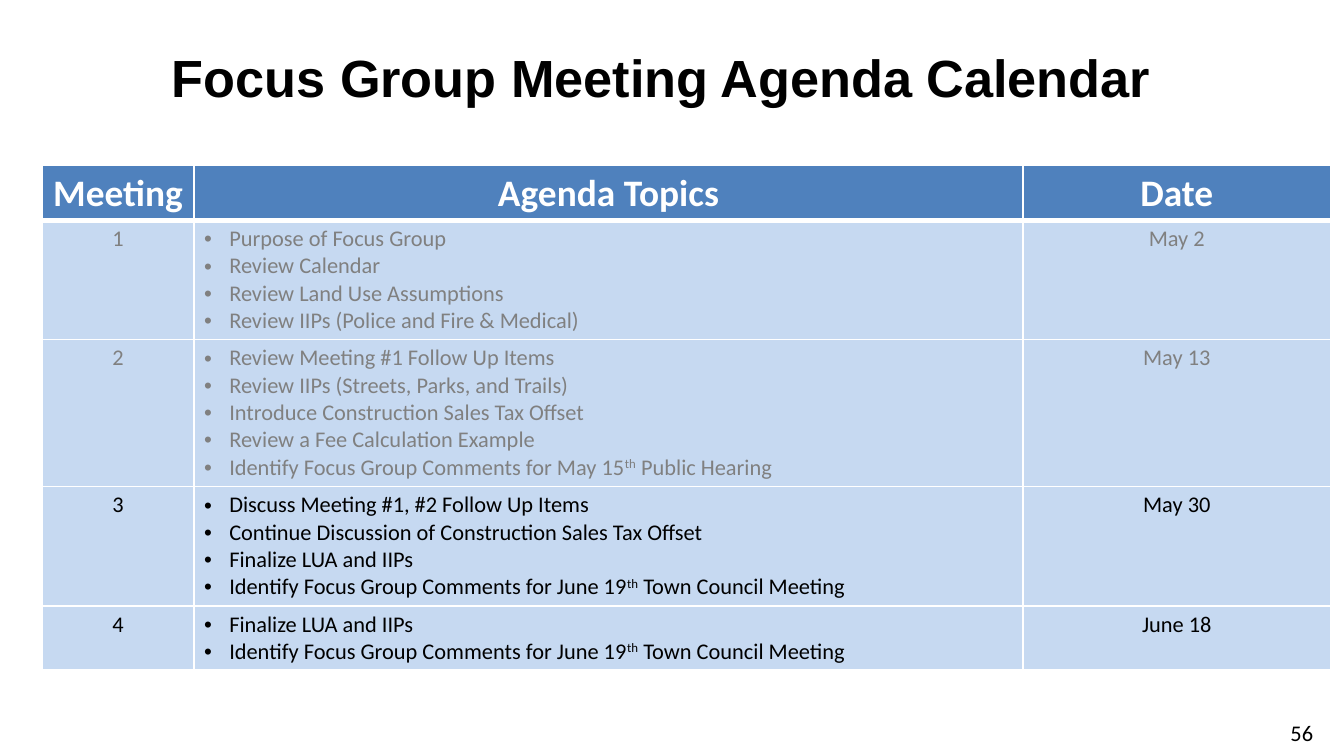
from pptx import Presentation
from pptx.dml.color import RGBColor
from pptx.enum.text import MSO_ANCHOR, PP_ALIGN
from pptx.oxml import parse_xml
from pptx.oxml.ns import nsdecls
from pptx.util import Pt

EMU_PER_PX = 5715  # 160 px to the inch
HEADER_HEIGHT = 65
LINE_HEIGHT = 33
ROW_PADDING = 10
INSETS = {"margin_left": 12, "margin_top": 6, "margin_right": 12, "margin_bottom": 6}
BULLET_INDENT = 30

BLACK, WHITE, GRAY = "000000", "FFFFFF", "808080"
HEADER_FILL, BODY_FILL = "4F81BD", "C6D9F1"

TITLE_FORMAT = {"name": "Arial", "size": Pt(28), "bold": True}
HEADER_FORMAT = {"name": "Calibri", "size": Pt(20), "bold": True}
BODY_FORMAT = {"name": "Calibri", "size": Pt(12), "bold": False}

COLUMN_WIDTHS = [181, 987, 366]
HEADERS = ["Meeting", " Agenda Topics ", "Date"]
# A topic with a raised ordinal is split into three parts
COUNCIL_TOPIC = ("Identify Focus Group Comments for June 19", "th", " Town Council Meeting")
MEETINGS = [
    ("May 2", GRAY, [
        "Purpose of Focus Group",
        "Review Calendar",
        "Review Land Use Assumptions",
        "Review IIPs (Police and Fire & Medical)",
    ]),
    ("May 13", GRAY, [
        "Review Meeting #1 Follow Up Items",
        "Review IIPs (Streets, Parks, and Trails)",
        "Introduce Construction Sales Tax Offset",
        "Review a Fee Calculation Example",
        ("Identify Focus Group Comments for May 15", "th", " Public Hearing"),
    ]),
    ("May 30", BLACK, [
        "Discuss Meeting #1, #2 Follow Up Items",
        "Continue Discussion of Construction Sales Tax Offset",
        "Finalize LUA and IIPs",
        COUNCIL_TOPIC,
    ]),
    ("June 18", BLACK, ["Finalize LUA and IIPs", COUNCIL_TOPIC]),
]


def px(length):
    return length * EMU_PER_PX


def color(hex_value):
    return RGBColor.from_string(hex_value)


def set_attributes(target, values):
    for name, value in values.items():
        setattr(target, name, value)


def add_text(paragraph, content, text_format, text_color, alignment):
    paragraph.alignment = alignment
    parts = (content,) if isinstance(content, str) else content
    for index, part in enumerate(parts):
        run = paragraph.add_run()
        run.text = part
        set_attributes(run.font, text_format)
        run.font.color.rgb = color(text_color)
        if index == 1:
            run._r.get_or_add_rPr().set("baseline", "30000")


def add_bullet(paragraph):
    properties = paragraph._p.get_or_add_pPr()
    properties.set("marL", str(px(BULLET_INDENT)))
    properties.set("indent", str(-px(BULLET_INDENT)))
    for tag, attribute in (("buFont", 'typeface="Arial"'), ("buChar", 'char="•"')):
        properties.append(parse_xml(f'<a:{tag} {nsdecls("a")} {attribute}/>'))


def add_text_box(slide, box, content, text_format, alignment, frame_format):
    shape = slide.shapes.add_textbox(*map(px, box))
    frame = shape.text_frame
    frame.word_wrap = True
    set_attributes(frame, frame_format)
    add_text(frame.paragraphs[0], content, text_format, BLACK, alignment)


def fill_cell(cell, contents, text_format, text_color, fill, borders, bulleted=False):
    set_attributes(cell, {name: px(value) for name, value in INSETS.items()})
    properties = cell._tc.get_or_add_tcPr()
    for side, width in zip("LRTB", borders):
        properties.append(parse_xml(
            f'<a:ln{side} {nsdecls("a")} w="{Pt(width)}"><a:solidFill>'
            f'<a:srgbClr val="{WHITE}"/></a:solidFill></a:ln{side}>'))
    cell.fill.solid()
    cell.fill.fore_color.rgb = color(fill)
    frame = cell.text_frame
    for index, content in enumerate(contents):
        paragraph = frame.add_paragraph() if index else frame.paragraphs[0]
        if bulleted:
            add_bullet(paragraph)
        alignment = PP_ALIGN.LEFT if bulleted else PP_ALIGN.CENTER
        add_text(paragraph, content, text_format, text_color, alignment)


def add_agenda_table(slide, left, top):
    row_heights = [HEADER_HEIGHT] + [
        len(topics) * LINE_HEIGHT + ROW_PADDING for _, _, topics in MEETINGS]
    table = slide.shapes.add_table(
        len(row_heights), len(COLUMN_WIDTHS), px(left), px(top),
        px(sum(COLUMN_WIDTHS)), px(sum(row_heights))).table
    table.horz_banding = False
    for column, width in zip(table.columns, COLUMN_WIDTHS):
        column.width = px(width)
    for row, height in zip(table.rows, row_heights):
        row.height = px(height)

    # Header row
    for index, header in enumerate(HEADERS):
        fill_cell(table.cell(0, index), [header], HEADER_FORMAT, WHITE,
                  HEADER_FILL, (1, 1, 1, 3))

    # One row for each meeting
    for number, (date, text_color, topics) in enumerate(MEETINGS, start=1):
        borders = (1, 1, 3 if number == 1 else 1, 1)
        for index, contents in enumerate(([str(number)], topics, [date])):
            fill_cell(table.cell(number, index), contents, BODY_FORMAT, text_color,
                      BODY_FILL, borders, bulleted=index == 1)


def main():
    presentation = Presentation()
    presentation.slide_width, presentation.slide_height = px(1600), px(900)
    slide = presentation.slides.add_slide(presentation.slide_layouts[6])

    # Title
    add_text_box(slide, (120, 106, 1334, 43), "Focus Group Meeting Agenda Calendar",
                 TITLE_FORMAT, PP_ALIGN.CENTER,
                 {"vertical_anchor": MSO_ANCHOR.BOTTOM, "margin_top": 0,
                  "margin_bottom": px(21)})
    # Agenda
    add_agenda_table(slide, 50, 197)
    # Page number
    add_text_box(slide, (1480, 848, 99, 48), "56", BODY_FORMAT, PP_ALIGN.RIGHT, {})

    presentation.save("out.pptx")


if __name__ == "__main__":
    main()
